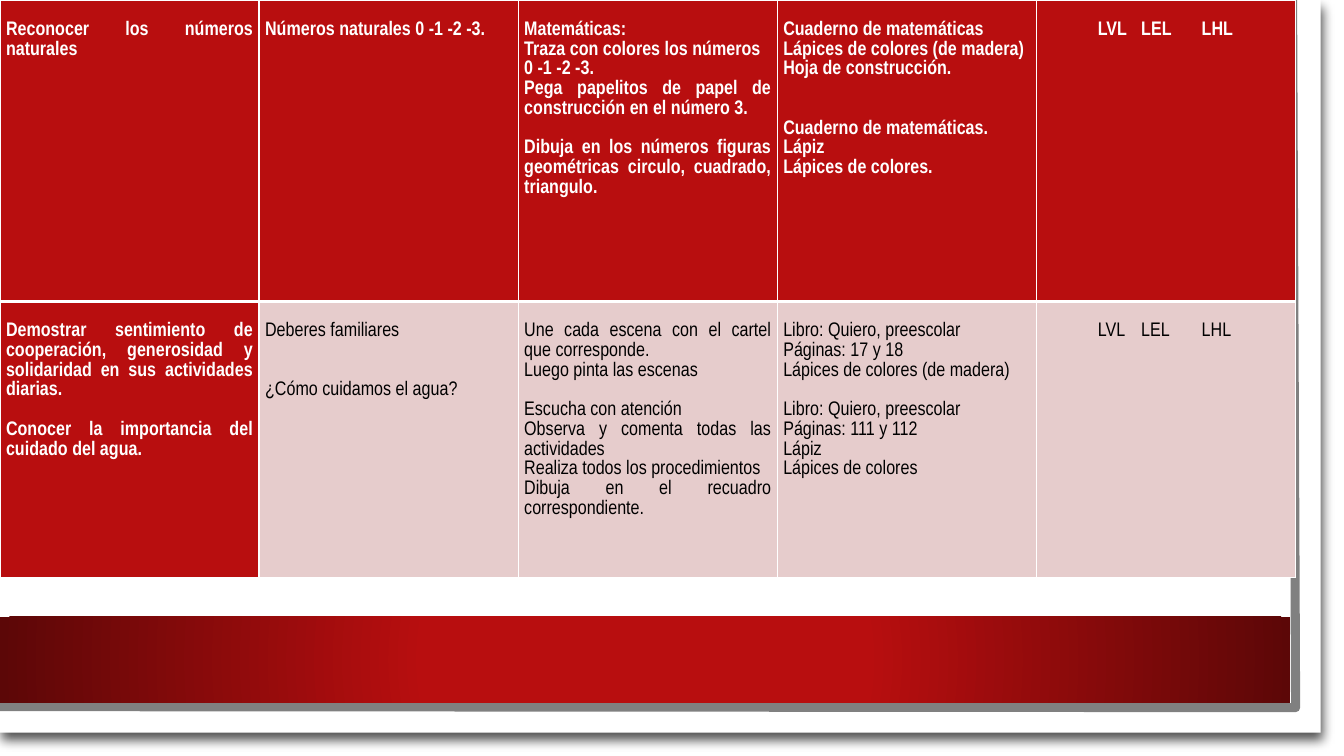
from dataclasses import dataclass

from lxml.etree import SubElement
from pptx import Presentation
from pptx.dml.color import RGBColor
from pptx.enum.shapes import MSO_SHAPE
from pptx.enum.text import PP_ALIGN
from pptx.oxml import parse_xml
from pptx.oxml.ns import nsdecls, qn
from pptx.util import Emu, Inches, Pt

# A plain line is a string; (n, text) leaves n empty lines above the text.
SCHEDULE = [
    [
        ["Reconocer los números naturales"],
        ["Números naturales 0 -1 -2 -3."],
        ["Matemáticas:",
         "Traza con colores los números",
         "0 -1 -2 -3.",
         "Pega papelitos de papel de construcción en el número 3.",
         (1, "Dibuja en los números figuras geométricas circulo, cuadrado, triangulo.")],
        ["Cuaderno de matemáticas",
         "Lápices de colores (de madera)",
         "Hoja de construcción.",
         (2, "Cuaderno de matemáticas."),
         "Lápiz",
         "Lápices de colores."],
        ["LVL\tLEL\tLHL"],
    ],
    [
        ["Demostrar sentimiento de cooperación, generosidad y solidaridad "
         "en sus actividades diarias.",
         (1, "Conocer la importancia del cuidado del agua.")],
        ["Deberes familiares",
         (2, "¿Cómo cuidamos el agua?")],
        ["Une cada escena con el cartel que corresponde.",
         "Luego pinta las escenas",
         (1, "Escucha con atención"),
         "Observa y comenta todas las actividades",
         "Realiza todos los procedimientos",
         "Dibuja en el recuadro correspondiente."],
        ["Libro: Quiero, preescolar",
         "Páginas: 17 y 18",
         "Lápices de colores (de madera)",
         (1, "Libro: Quiero, preescolar"),
         "Páginas: 111 y 112",
         "Lápiz",
         "Lápices de colores"],
        ["LVL\tLEL\tLHL"],
    ],
]
COLUMN_WIDTH = 2.57
ROW_HEIGHTS = [2.99, 2.74]
CELL_MARGIN = 0.06
LEVELS_MARGIN = 0.61
LEVELS_TABS = [0.43, 1.03]


@dataclass(frozen=True)
class Theme:
    font: str = "Arial Narrow"
    size: float = 14
    line_pitch: float = 14.1
    line_spacing: float = 1.07
    thin: float = 1
    thick: float = 3
    red: str = "B80E0F"
    dark_red: str = "5C0707"
    pink: str = "E6CCCC"
    gray: str = "808080"
    white: str = "FFFFFF"
    black: str = "000000"


THEME = Theme()


def color(value):
    return RGBColor.from_string(value)


def add_rectangle(slide, left, top, width, height):
    shape = slide.shapes.add_shape(
        MSO_SHAPE.RECTANGLE, *map(Inches, (left, top, width, height)))
    shape.shadow.inherit = False
    shape.line.fill.background()
    return shape


def add_paper(slide):
    """Add the white sheet with its soft shadow and gray folded edge."""
    sheet = add_rectangle(slide, 0, 0, 13.1, 7.27)
    sheet.fill.solid()
    sheet.fill.fore_color.rgb = color(THEME.white)
    effects = sheet._element.spPr.find(qn("a:effectLst"))
    effects.append(parse_xml(
        f'<a:outerShdw {nsdecls("a")} blurRad="{Pt(7.8)}" dist="{Pt(6)}" '
        f'dir="{73 * 60000}" rotWithShape="0"><a:srgbClr val="{THEME.black}">'
        '<a:alpha val="68000"/></a:srgbClr></a:outerShdw>'))

    builder = slide.shapes.build_freeform(
        Inches(12.82), Inches(0), scale=1.0)
    builder.add_line_segments(
        [(Inches(12.85), Inches(7.02)), (Inches(-0.03), Inches(7.01))],
        close=False)
    edge = builder.convert_to_shape()
    edge.shadow.inherit = False
    edge.fill.background()
    edge.line.color.rgb = color(THEME.gray)
    edge.line.width = Pt(6.5)


def add_band(slide):
    """Add the red band that darkens outward from its centre."""
    band = add_rectangle(slide, 0, 6.12, 12.8, 0.85)
    band.fill.gradient()
    stops = [(0.34, THEME.red), (1, THEME.dark_red)]
    for stop, (position, value) in zip(band.fill.gradient_stops, stops):
        stop.position = position
        stop.color.rgb = color(value)
    gradient = band._element.spPr.find(qn("a:gradFill"))
    gradient.replace(gradient.find(qn("a:lin")), parse_xml(
        f'<a:path {nsdecls("a")} path="circle"><a:fillToRect '
        'l="50000" t="50000" r="50000" b="50000"/></a:path>'))


def set_borders(cell, top, bottom):
    properties = cell._tc.get_or_add_tcPr()
    widths = {"lnL": THEME.thin, "lnR": THEME.thin, "lnT": top, "lnB": bottom}
    for index, (side, width) in enumerate(widths.items()):
        properties.insert(index, parse_xml(
            f'<a:{side} {nsdecls("a")} w="{Pt(width)}"><a:solidFill>'
            f'<a:srgbClr val="{THEME.white}"/></a:solidFill></a:{side}>'))


def add_tabs(paragraph):
    tabs = SubElement(paragraph._p.get_or_add_pPr(), qn("a:tabLst"))
    for position in LEVELS_TABS:
        SubElement(tabs, qn("a:tab"), pos=str(Inches(position)), algn="l")


def write_cell(cell, lines, bold, has_levels):
    cell.margin_left = Inches(LEVELS_MARGIN if has_levels else CELL_MARGIN)
    cell.margin_right = Inches(CELL_MARGIN)
    cell.margin_top = Pt(THEME.line_pitch)
    cell.margin_bottom = Emu(0)
    frame = cell.text_frame
    for index, line in enumerate(lines):
        gap, text = line if isinstance(line, tuple) else (0, line)
        paragraph = frame.add_paragraph() if index else frame.paragraphs[0]
        paragraph.text = text
        if has_levels:
            add_tabs(paragraph)
        paragraph.alignment = PP_ALIGN.LEFT if has_levels else PP_ALIGN.JUSTIFY
        paragraph.line_spacing = THEME.line_spacing
        if gap:
            paragraph.space_before = Pt(gap * THEME.line_pitch)
        font = paragraph.font
        font.name, font.size, font.bold = THEME.font, Pt(THEME.size), bold
        font.color.rgb = color(THEME.white if bold else THEME.black)


def add_schedule(slide):
    column_count = len(SCHEDULE[0])
    table = slide.shapes.add_table(
        len(SCHEDULE), column_count, 0, 0,
        Inches(COLUMN_WIDTH * column_count), Inches(sum(ROW_HEIGHTS))).table
    for column in table.columns:
        column.width = Inches(COLUMN_WIDTH)
    for row_index, row in enumerate(SCHEDULE):
        table.rows[row_index].height = Inches(ROW_HEIGHTS[row_index])
        for column_index, lines in enumerate(row):
            cell = table.cell(row_index, column_index)
            heading = row_index == 0 or column_index == 0
            write_cell(cell, lines, heading, column_index == column_count - 1)
            cell.fill.solid()
            cell.fill.fore_color.rgb = color(THEME.red if heading else THEME.pink)
            if row_index == 0:
                set_borders(cell, THEME.thin, THEME.thick)
            else:
                set_borders(cell, THEME.thick, THEME.thin)


def main():
    presentation = Presentation()
    presentation.slide_width = Inches(13.33)
    presentation.slide_height = Inches(7.5)
    slide = presentation.slides.add_slide(presentation.slide_layouts[6])
    add_paper(slide)
    add_band(slide)
    add_schedule(slide)
    presentation.save("out.pptx")


if __name__ == "__main__":
    main()
